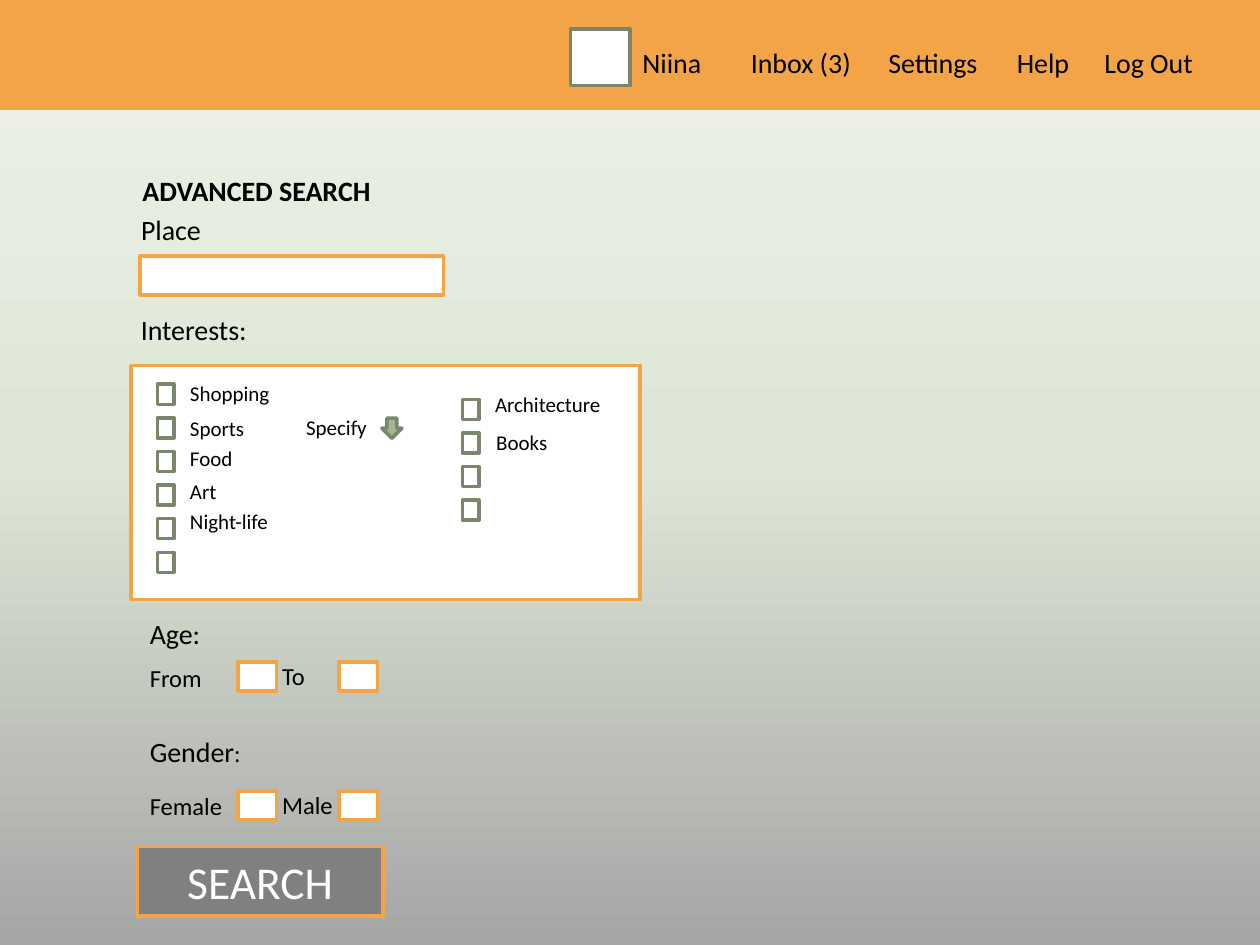
from copy import deepcopy

from pptx import Presentation
from pptx.dml.color import RGBColor
from pptx.enum.shapes import MSO_SHAPE
from pptx.enum.text import MSO_ANCHOR, PP_ALIGN
from pptx.util import Pt

RECT, DOWN_ARROW = MSO_SHAPE.RECTANGLE, MSO_SHAPE.DOWN_ARROW
TOP, MIDDLE = MSO_ANCHOR.TOP, MSO_ANCHOR.MIDDLE
LEFT, CENTER = PP_ALIGN.LEFT, PP_ALIGN.CENTER
FONT = "Calibri"
COLORS = {
    "orange": "F3A447", "olive": "7A866C", "sage": "A5B592", "white": "FFFFFF",
    "black": "000000", "button": "808080",
    "bg_bottom": "A6A6A6", "bg_middle": "DDE5D4", "bg_top": "EEF2EA",
}


def rgb(name):
    """Return the named palette colour."""
    return RGBColor.from_string(COLORS[name])


def style(p, size, color="black", bold=False, align=LEFT):
    """Format a paragraph."""
    p.alignment = align
    p.font.name, p.font.size, p.font.bold = FONT, Pt(size), bold
    p.font.color.rgb = rgb(color)


def add_box(s, x, y, w, h, line="orange", fill="white", kind=RECT):
    """Add a filled, outlined shape."""
    sp = s.shapes.add_shape(kind, Pt(x), Pt(y), Pt(w), Pt(h))
    sp.shadow.inherit = False
    sp.fill.solid()
    sp.fill.fore_color.rgb = rgb(fill)
    sp.line.color.rgb = rgb(line)
    sp.line.width = Pt(2)
    return sp


def add_label(s, text, x, y, w, size):
    """Add a one-line label and return its paragraph."""
    sp = s.shapes.add_textbox(Pt(x), Pt(y), Pt(w), Pt(size * 1.2 + 7.2))
    sp.text_frame.word_wrap = True
    p = sp.text_frame.paragraphs[0]
    p.text = text
    style(p, size)
    return p


def add_background(s):
    """Fill the background with a vertical three-stop gradient."""
    fill = s.background.fill
    fill.gradient()
    fill.gradient_angle = 90
    first = fill._fill._gradFill.gsLst[0]
    first.addnext(deepcopy(first))
    names = ("bg_bottom", "bg_middle", "bg_top")
    for stop, position, name in zip(fill.gradient_stops, (0, 0.5, 1), names):
        stop.position = position
        stop.color.rgb = rgb(name)


def add_header(s, x, y, w, h):
    """Add the top bar with the avatar and menu."""
    add_box(s, x, y, w, h, fill="orange")
    add_box(s, x + 326, y + 16.5, 34, 32.5, line="olive")
    menu = [("Niina", 360, 60), ("Inbox (3)", 422, 78), ("Settings", 500.5, 73),
            ("Help", 574, 50), ("Log Out", 624, 96)]
    for text, dx, width in menu:
        add_label(s, text, x + dx, y + 22.3, width, 16)


def add_place(s, x, y, w):
    """Add the heading and the place field."""
    title = s.shapes.title
    title.left, title.top, title.width, title.height = Pt(x), Pt(y), Pt(206), Pt(26.6)
    title.text_frame.vertical_anchor = TOP
    p = title.text_frame.paragraphs[0]
    p.text = "ADVANCED SEARCH"
    style(p, 16, bold=True)
    add_label(s, "Place", x - 0.7, y + 22.3, 78.5, 16)
    add_box(s, x + 5.8, y + 50.4, w, 22.3)


def add_checks(s, x, y, count, labels):
    """Add a column of checkboxes with labels as (text, x offset, y offset)."""
    for i in range(count):
        add_box(s, x, y + i * 19.2, 9.4, 11.5, line="olive")
    for text, dx, dy in labels:
        add_label(s, text, x + dx, y + dy, 81, 12)


def add_interests(s, x, y, w, h):
    """Add the interests panel with two checkbox columns."""
    add_label(s, "Interests:", x - 1.5, y - 33.8, 78, 16)
    add_box(s, x, y, w, h)
    add_checks(s, x + 15.1, y + 10.8, 6, [
        ("Shopping", 11.5, -5.8), ("Sports", 11.5, 14.4), ("Food", 11.5, 31.7),
        ("Art", 11.5, 50.4), ("Night-life", 11.5, 67.7)])
    add_checks(s, x + 189.4, y + 19.4, 4, [
        ("Architecture", 11.5, -7.9), ("Books", 12.2, 13.7)])
    add_label(s, "Specify", x + 92.9, y + 24.5, 63.4, 12)
    add_box(s, x + 143.3, y + 30.2, 11.5, 11.5, "olive", "sage", DOWN_ARROW)


def add_pair(s, x, y, row, heading, labels):
    """Add a heading over two labelled fields; return the heading paragraph."""
    p = add_label(s, heading, x, y, 75.6, 16)
    for i, text in enumerate(labels):
        add_label(s, text, x + i * 75.6, y + row - i * 0.7, 75.6, 14)
        add_box(s, x + 57.6 + i * 57.6, y + row + 3.3, 22, 16.6)
    return p


def add_button(s, x, y, w, h):
    """Add the search button."""
    tf = add_box(s, x, y, w, h, fill="button").text_frame
    tf.vertical_anchor = MIDDLE
    p = tf.paragraphs[0]
    p.text = "SEARCH"
    style(p, 26, "white", align=CENTER)


def main():
    """Build and save the search form slide."""
    prs = Presentation()
    prs.slide_width, prs.slide_height = Pt(720), Pt(540)
    s = prs.slides.add_slide(prs.slide_layouts[5])
    add_background(s)
    add_header(s, 0, 0, 720, 62)
    add_place(s, 74.2, 95.8, 173.5)
    add_interests(s, 74.9, 208.8, 290.9, 133.9)
    add_pair(s, 78.5, 348.5, 26.6, "Age:", ("From", "To"))
    gender = add_pair(s, 78.5, 416.2, 32.4, "Gender", ("Female", "Male"))
    r = gender.add_run()
    r.text = ":"
    r.font.size = Pt(14)
    add_button(s, 78.5, 483.8, 140.4, 39.6)
    prs.save("out.pptx")


if __name__ == "__main__":
    main()
